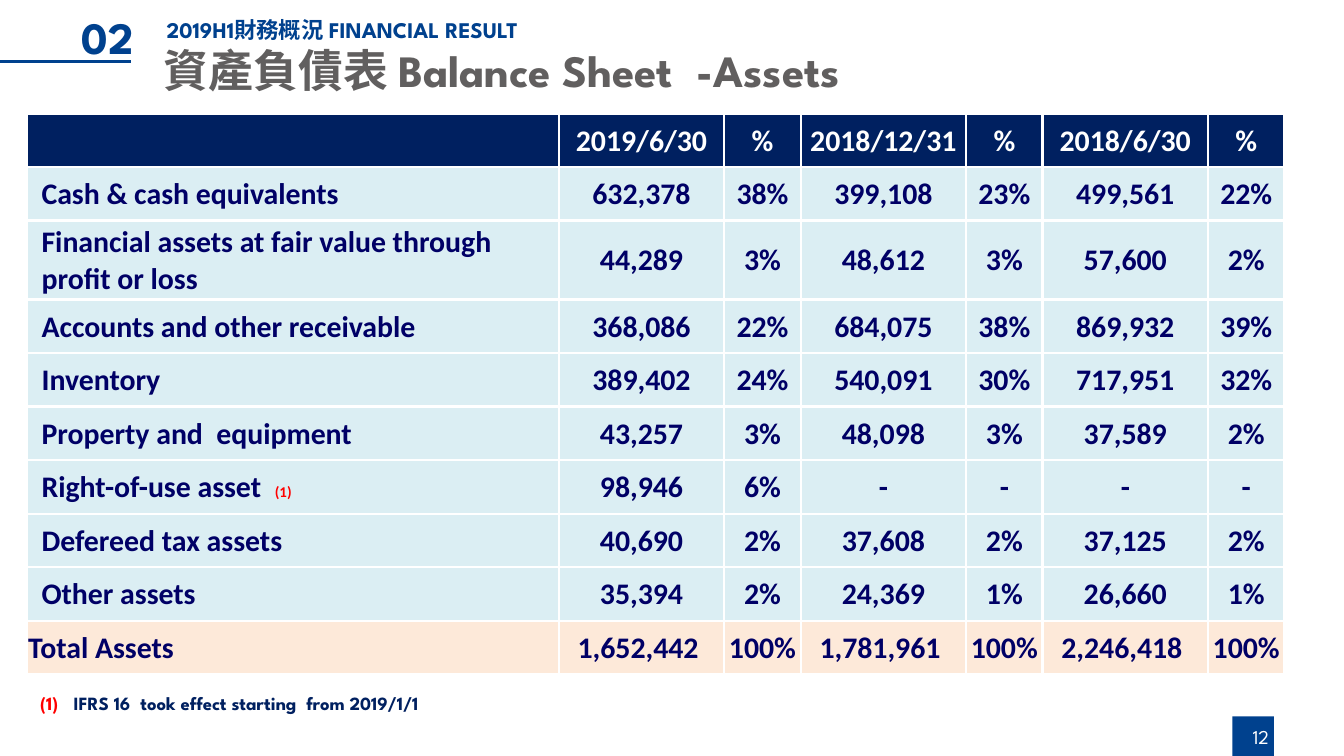
import dataclasses
import typing

import lxml.etree
import pptx
import pptx.dml.color
import pptx.enum.shapes
import pptx.enum.text
import pptx.oxml
import pptx.oxml.ns
import pptx.util

Pt = pptx.util.Pt
qn = pptx.oxml.ns.qn
ALIGN = pptx.enum.text.PP_ALIGN
ANCHOR = pptx.enum.text.MSO_ANCHOR

COLORS = {
    "blue": "00418E",
    "navy": "002060",
    "ink": "000066",
    "gray": "615F5F",
    "red": "FF0000",
    "white": "FFFFFF",
    "row": "DBEEF3",
    "total": "FDE9D9",
}
LATIN = "League Spartan"
CHINESE = "Noto Sans CJK SC"
TABLE_FONT = "Calibri"


@dataclasses.dataclass
class Box:
    left: float
    top: float
    width: float
    height: float

    def lengths(self) -> list[pptx.util.Length]:
        return [Pt(value) for value in dataclasses.astuple(self)]


@dataclasses.dataclass
class Style:
    size: float
    color: str
    font: str = LATIN
    bold: bool = True


@dataclasses.dataclass
class AssetRow:
    label: str
    values: list[str]
    fill: str = "row"
    color: str = "ink"
    indent: float = 7.9
    height: float = 28.7
    note: str = ""


COLUMN_WIDTHS = [285] + [88.6, 41] * 3
ROWS = [
    AssetRow("", ["2019/6/30", "%", "2018/12/31", "%", "2018/6/30", "%"], "navy", "white"),
    AssetRow("Cash & cash equivalents", ["632,378", "38%", "399,108", "23%", "499,561", "22%"]),
    AssetRow("Financial assets at fair value through\vprofit or loss",
             ["44,289", "3%", "48,612", "3%", "57,600", "2%"], height=42.3),
    AssetRow("Accounts and other receivable",
             ["368,086", "22%", "684,075", "38%", "869,932", "39%"]),
    AssetRow("Inventory", ["389,402", "24%", "540,091", "30%", "717,951", "32%"]),
    AssetRow("Property and  equipment", ["43,257", "3%", "48,098", "3%", "37,589", "2%"]),
    AssetRow("Right-of-use asset  ", ["98,946", "6%", "-", "-", "-", "-"], note="(1)"),
    AssetRow("Defereed tax assets", ["40,690", "2%", "37,608", "2%", "37,125", "2%"]),
    AssetRow("Other assets", ["35,394", "2%", "24,369", "1%", "26,660", "1%"]),
    AssetRow("Total Assets", ["1,652,442 ", "100%", "1,781,961 ", "100%", "2,246,418 ", "100%"],
             "total", indent=0.7),
]


def rgb(name: str) -> pptx.dml.color.RGBColor:
    return pptx.dml.color.RGBColor.from_string(COLORS[name])


def apply_style(font: typing.Any, style: Style) -> None:
    font.size = Pt(style.size)
    font.name = style.font
    font.bold = style.bold
    font.color.rgb = rgb(style.color)


def add_run(paragraph: typing.Any, text: str) -> typing.Any:
    run = paragraph.add_run()
    run.text = text
    return run


def set_chinese_font(run: typing.Any) -> None:
    east_asian = lxml.etree.SubElement(run.font._element, qn("a:ea"))
    east_asian.set("typeface", CHINESE)


def place_text(shape: typing.Any, box: Box, style: Style, anchor: typing.Any = ANCHOR.TOP,
               alignment: typing.Any = ALIGN.LEFT) -> typing.Any:
    shape.left, shape.top, shape.width, shape.height = box.lengths()
    frame = shape.text_frame
    frame.word_wrap = True
    frame.auto_size = pptx.enum.text.MSO_AUTO_SIZE.NONE
    frame.vertical_anchor = anchor
    paragraph = frame.paragraphs[0]
    paragraph.alignment = alignment
    apply_style(paragraph.font, style)
    return paragraph


def set_indent(paragraph: typing.Any, points: float) -> None:
    properties = paragraph._p.get_or_add_pPr()
    properties.set("marL", str(Pt(points)))
    properties.set("indent", str(-Pt(points)))
    properties.insert_element_before(
        pptx.oxml.parse_xml(f"<a:buNone {pptx.oxml.ns.nsdecls('a')}/>"),
        "a:tabLst", "a:defRPr", "a:extLst")


def set_borders(cell: typing.Any) -> None:
    properties = cell._tc.get_or_add_tcPr()
    for side in ("lnL", "lnR", "lnT", "lnB"):
        properties.append(pptx.oxml.parse_xml(
            f'<a:{side} {pptx.oxml.ns.nsdecls("a")} w="{Pt(1.5)}"><a:solidFill>'
            f'<a:srgbClr val="{COLORS["white"]}"/></a:solidFill></a:{side}>'))


def fill_cell(cell: typing.Any, text: str, row: AssetRow, is_label: bool) -> None:
    set_borders(cell)
    cell.fill.solid()
    cell.fill.fore_color.rgb = rgb(row.fill)
    cell.vertical_anchor = ANCHOR.MIDDLE
    cell.margin_left = Pt(row.indent if is_label else 0.7)
    cell.margin_right = cell.margin_top = Pt(0.7)
    cell.margin_bottom = 0
    cell.text = text
    paragraph = cell.text_frame.paragraphs[0]
    paragraph.alignment = ALIGN.LEFT if is_label else ALIGN.CENTER
    apply_style(paragraph.font, Style(16, row.color, TABLE_FONT))
    if is_label and row.note:
        apply_style(add_run(paragraph, row.note).font, Style(8, "red", TABLE_FONT))


def add_assets_table(slide: typing.Any, rows: list[AssetRow]) -> None:
    box = Box(14.4, 60.8, sum(COLUMN_WIDTHS), sum(row.height for row in rows))
    table = slide.shapes.add_table(len(rows), len(COLUMN_WIDTHS), *box.lengths()).table
    table.first_row = table.horz_banding = False
    for column, width in zip(table.columns, COLUMN_WIDTHS):
        column.width = Pt(width)
    for row_index, row in enumerate(rows):
        table.rows[row_index].height = Pt(row.height)
        for column_index, text in enumerate([row.label, *row.values]):
            fill_cell(table.cell(row_index, column_index), text, row, column_index == 0)


def add_frame(slide: typing.Any) -> None:
    block = slide.shapes.add_shape(pptx.enum.shapes.MSO_SHAPE.RECTANGLE,
                                   *Box(660.2, 383.8, 22.3, 21.2).lengths())
    block.shadow.inherit = False
    block.fill.solid()
    block.fill.fore_color.rgb = rgb("blue")
    block.line.fill.background()
    rule = slide.shapes.add_connector(pptx.enum.shapes.MSO_CONNECTOR.STRAIGHT,
                                      Pt(0), Pt(33.1), Pt(70), Pt(33.1))
    rule.line.color.rgb = rgb("blue")
    rule.line.width = Pt(1.5)
    lxml.etree.SubElement(rule._element.spPr, qn("a:effectLst"))
    number = slide.shapes.add_textbox(0, 0, 0, 0)
    paragraph = place_text(number, Box(653.8, 383.8, 33.1, 21.6),
                           Style(10.5, "white", bold=False), ANCHOR.MIDDLE, ALIGN.RIGHT)
    add_run(paragraph, "12")


def add_headings(slide: typing.Any) -> None:
    title, heading, section = slide.placeholders
    paragraph = place_text(title, Box(82.1, 4.3, 594, 23), Style(12, "blue"), ANCHOR.MIDDLE)
    set_chinese_font(add_run(paragraph, "2019H1財務概況 FINANCIAL RESULT"))

    paragraph = place_text(heading, Box(80.6, 19.4, 572.4, 38.2), Style(24, "gray"))
    set_indent(paragraph, 20.2)
    chinese = add_run(paragraph, "資產負債表 ")
    chinese.font.name = CHINESE
    set_chinese_font(chinese)
    add_run(paragraph, "Balance Sheet  -Assets")

    paragraph = place_text(section, Box(36.7, 1.4, 51.1, 33.8), Style(24, "blue"))
    set_indent(paragraph, 20.2)
    add_run(paragraph, "02")


def add_footnote(slide: typing.Any) -> None:
    footnote = slide.shapes.add_textbox(0, 0, 0, 0)
    paragraph = place_text(footnote, Box(14.4, 367.2, 661.7, 19.4), Style(10, "navy"))
    set_indent(paragraph, 18)
    add_run(paragraph, "(1)").font.color.rgb = rgb("red")
    add_run(paragraph, "\tIFRS 16  took effect starting  from 2019/1/1")


def main() -> None:
    presentation = pptx.Presentation()
    presentation.slide_width, presentation.slide_height = Pt(720), Pt(405)
    slide = presentation.slides.add_slide(presentation.slide_layouts.get_by_name("Two Content"))
    add_frame(slide)
    add_headings(slide)
    add_assets_table(slide, ROWS)
    add_footnote(slide)
    presentation.save("out.pptx")


if __name__ == "__main__":
    main()
